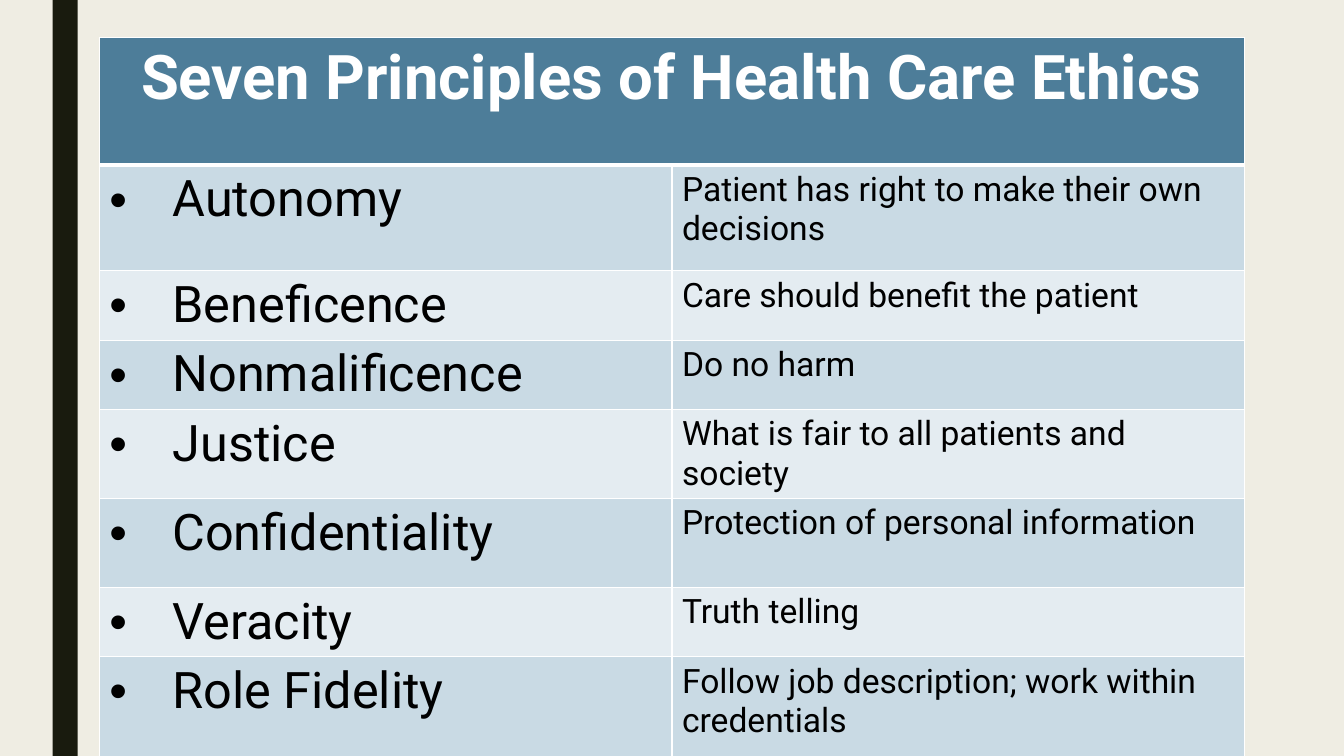
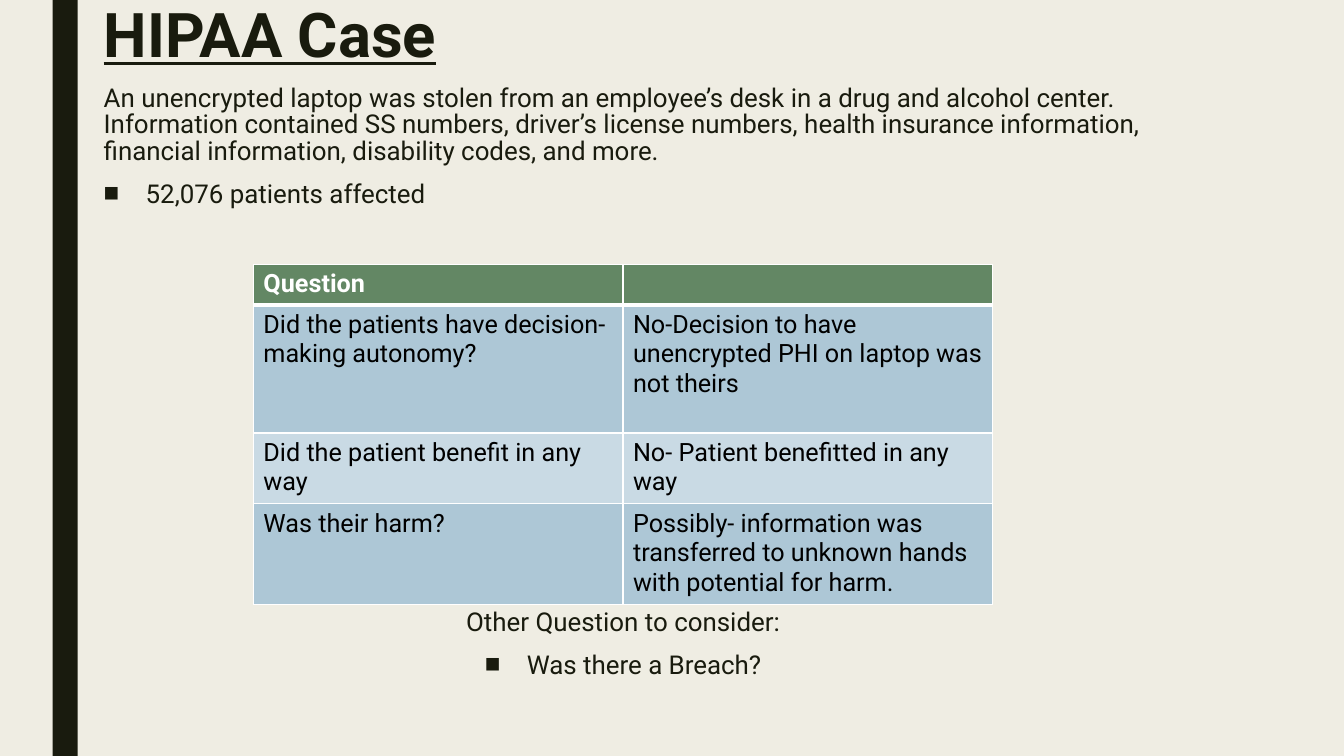
from lxml import etree
from pptx import Presentation
from pptx.dml.color import RGBColor
from pptx.enum.shapes import MSO_SHAPE
from pptx.enum.text import PP_ALIGN
from pptx.oxml import parse_xml
from pptx.oxml.ns import qn
from pptx.util import Pt

RECT = MSO_SHAPE.RECTANGLE
LEFT, CENTER = PP_ALIGN.LEFT, PP_ALIGN.CENTER

CREAM = RGBColor(0xEF, 0xED, 0xE3)
INK = RGBColor(0x19, 0x1B, 0x0E)
WHITE = RGBColor(0xFF, 0xFF, 0xFF)
BLACK = RGBColor(0, 0, 0)
TEAL = RGBColor(0x4D, 0x7D, 0x99)
GREEN = RGBColor(0x63, 0x87, 0x64)
STEEL = RGBColor(0xAD, 0xC7, 0xD6)
MIST = RGBColor(0xC9, 0xDA, 0xE4)
PALE = RGBColor(0xE4, 0xEC, 0xF1)

FONT = "Roboto"
NS = "http://schemas.openxmlformats.org/drawingml/2006/main"

ETHICS = [
    ("Autonomy", "Patient has right to make their own decisions"),
    ("Beneficence", "Care should benefit the patient"),
    ("Nonmalificence", "Do no harm"),
    ("Justice", "What is fair to all patients and society"),
    ("Confidentiality", "Protection of personal information"),
    ("Veracity", "Truth telling"),
    ("Role Fidelity", "Follow job description; work within credentials"),
]
CASE = [
    ("Did the patients have decision-making autonomy?",
     "No-Decision to have unencrypted PHI on laptop was not theirs"),
    ("Did the patient benefit in any way", "No- Patient benefitted in any way"),
    ("Was their harm?",
     "Possibly- information was transferred to unknown hands with potential for harm."),
]
STORY = ("An unencrypted laptop was stolen from an employee’s desk in a drug and "
         "alcohol center. Information contained SS numbers, driver’s license numbers, "
         "health insurance information, financial information, disability codes, and more.")


class Deck:
    def __init__(self):
        self.prs = Presentation()
        self.prs.slide_width, self.prs.slide_height = Pt(960), Pt(540)
        fill = self.prs.slide_master.background.fill
        fill.solid()
        fill.fore_color.rgb = CREAM

    def page(self):
        self.slide = self.prs.slides.add_slide(self.prs.slide_layouts[6])
        band = self.slide.shapes.add_shape(RECT, Pt(37.5), 0, Pt(18), Pt(540))
        band.shadow.inherit = False
        band.fill.solid()
        band.fill.fore_color.rgb = INK
        band.line.fill.background()

    def style(self, para, size, color, bold=False, line=False, align=LEFT):
        para.alignment = align
        for run in para.runs:
            font = run.font
            font.name, font.size, font.bold = FONT, Pt(size), bold
            font.underline = line
            font.color.rgb = color

    def bullet(self, para, mark, indent):
        props = para._p.get_or_add_pPr()
        props.set("marL", str(Pt(indent)))
        props.set("indent", str(-Pt(indent)))
        etree.SubElement(props, qn("a:buFont")).set("typeface", "Arial")
        etree.SubElement(props, qn("a:buChar")).set("char", mark)

    def box(self, top, height):
        frame = self.slide.shapes.add_textbox(
            Pt(67), Pt(top), Pt(756), Pt(height)).text_frame
        frame.word_wrap = True
        return frame

    def title(self, text):
        frame = self.box(0, 56)
        frame.text = text
        para = frame.paragraphs[0]
        para.line_spacing = 0.89
        self.style(para, 44, INK, bold=True, line=True)

    def body(self, top, height, lead, point, align=LEFT):
        """A lead paragraph with one square-bulleted point below it."""
        frame = self.box(top, height)
        frame.text = lead + "\n" + point
        for para in frame.paragraphs:
            para.line_spacing = 0.84
            para.space_before, para.space_after = Pt(10), Pt(2)
            self.style(para, 18.5, INK, align=align)
        self.bullet(frame.paragraphs[1], "■", 30)

    def edge(self, cell, base=1):
        """White cell borders, with the bottom one base points wide."""
        props = cell._tc.get_or_add_tcPr()
        widths = {"lnL": 1, "lnR": 1, "lnT": 1, "lnB": base}
        for spot, (tag, width) in enumerate(widths.items()):
            props.insert(spot, parse_xml(
                f'<a:{tag} xmlns:a="{NS}" w="{Pt(width)}"><a:solidFill>'
                f'<a:srgbClr val="{WHITE}"/></a:solidFill></a:{tag}>'))

    def cell(self, cell, text, fill, size, color=BLACK, head=False, align=LEFT):
        cell.text = text
        cell.fill.solid()
        cell.fill.fore_color.rgb = fill
        self.edge(cell, 3 if head else 1)
        para = cell.text_frame.paragraphs[0]
        self.style(para, size, color, bold=head, align=align)
        return para

    def table(self, left, top, width, heights, head, rows, fills, sizes,
              span=False, mark=None):
        """head is (texts, fill, size); fills alternate over the rows."""
        grid = self.slide.shapes.add_table(
            len(heights), 2, Pt(left), Pt(top), Pt(2 * width), Pt(sum(heights))).table
        for col in grid.columns:
            col.width = Pt(width)
        for row, height in zip(grid.rows, heights):
            row.height = Pt(height)
        texts, fill, size = head
        for col, text in enumerate(texts):
            self.cell(grid.cell(0, col), text, fill, size, WHITE, True,
                      CENTER if span else LEFT)
        if span:
            grid.cell(0, 0).merge(grid.cell(0, 1))
        for num, row in enumerate(rows):
            for col, text in enumerate(row):
                para = self.cell(grid.cell(num + 1, col), text,
                                 fills[num % 2], sizes[col])
                if mark and col == 0:
                    self.bullet(para, mark, 45)


def main():
    deck = Deck()

    deck.page()
    deck.table(71, 27, 409, [91, 75.5, 49.5, 49.5, 63.5, 63.5, 49.5, 71],
               (("Seven Principles of Health Care Ethics", ""), TEAL, 44),
               ETHICS, (MIST, PALE), (36, 24), span=True, mark="•")

    deck.page()
    deck.title("HIPAA Case")
    deck.body(58.5, 96, STORY, "52,076 patients affected")
    deck.table(181, 189, 264, [28.5, 91.5, 49.5, 70],
               (("Question", ""), GREEN, 18), CASE, (STEEL, MIST), (18, 18))
    deck.body(432.5, 60, "Other Question to consider:", "Was there a Breach?", CENTER)

    deck.prs.save("out.pptx")


if __name__ == "__main__":
    main()
